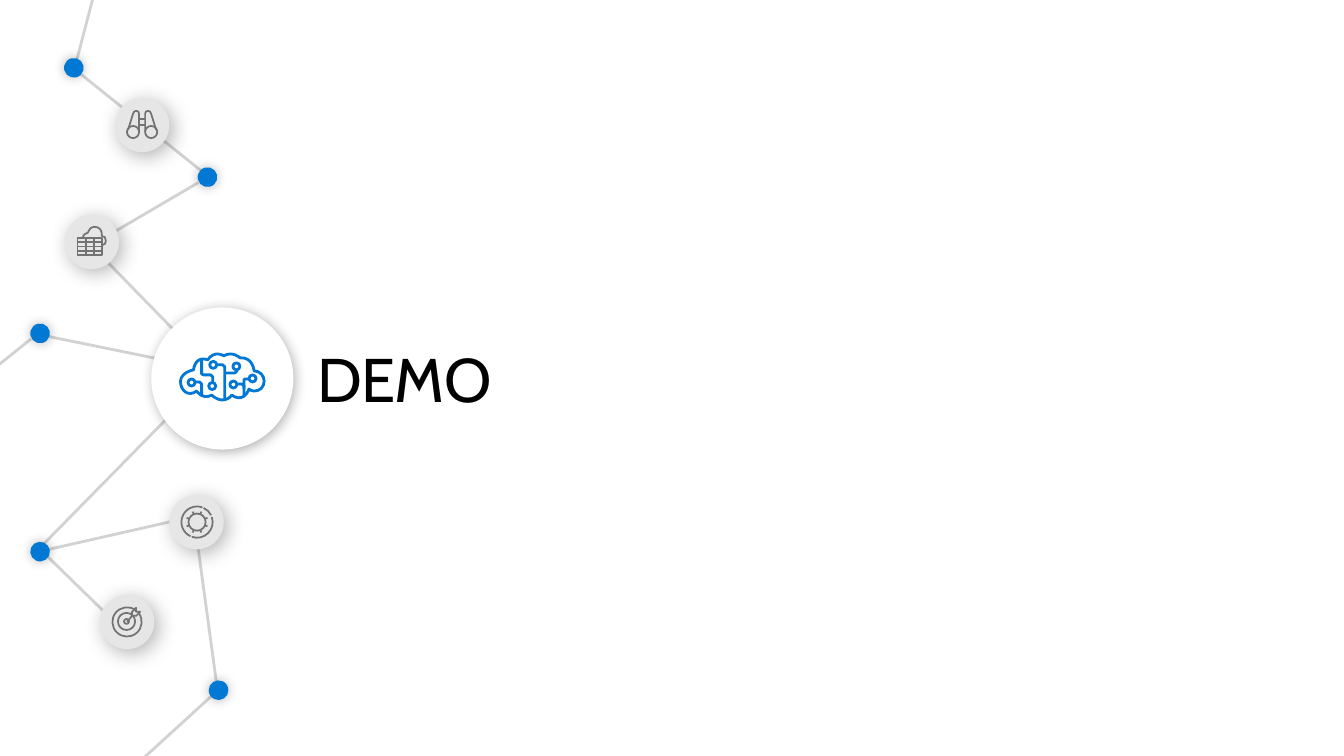
import math

import lxml.etree
import pptx
import pptx.dml.color
import pptx.enum.shapes
import pptx.enum.text
import pptx.oxml.ns
import pptx.util

COLUMNS, ROWS = 1333, 750
CELL = pptx.util.Inches(0.01)

GREY_LINE = {"color": "D2D2D2", "width": 2}
GREY_ICON = {"color": "737373", "width": 1.25}
BLUE_ICON = {"color": "0078D4", "width": 2}
DOT_SHADOW = {"alpha": 27, "blur": 8, "dist": 0, "angle": 0}
DISC_SHADOW = {"alpha": 30, "blur": 15, "dist": 4, "angle": 45}
HUB_SHADOW = {"alpha": 30, "blur": 9, "dist": 2, "angle": 45}


def rgb(hex_color):
    return pptx.dml.color.RGBColor.from_string(hex_color)


def add_xml(parent, tag, **attributes):
    return lxml.etree.SubElement(
        parent, pptx.oxml.ns.qn(tag), {k: str(v) for k, v in attributes.items()})


# Every stroke of an icon is a start point followed by three points for each cubic curve.

def straight(start, *ends):
    return [start, *(end for end in ends for _ in range(3))]


def arc(cx, cy, r, start=0, end=360):
    """Stroke along an arc, in degrees clockwise from the right."""
    count = math.ceil((end - start) / 90)
    step = math.radians((end - start) / count)
    k = 4 / 3 * math.tan(step / 4)
    points = [(cx + r * math.cos(math.radians(start)), cy + r * math.sin(math.radians(start)))]
    for i in range(count):
        a = math.radians(start) + i * step
        b = a + step
        points += [(cx + r * (math.cos(t) - h * math.sin(t)),
                    cy + r * (math.sin(t) + h * math.cos(t)))
                   for t, h in ((a, k), (b, -k), (b, 0))]
    return points


def bend_segments(sp):
    """Turn each three line segments of a freeform into one cubic curve."""
    segments = list(sp._element.spPr.iter(pptx.oxml.ns.qn("a:lnTo")))
    for i in range(0, len(segments), 3):
        curve = lxml.etree.Element(pptx.oxml.ns.qn("a:cubicBezTo"))
        segments[i].addprevious(curve)
        for segment in segments[i:i + 3]:
            curve.append(segment[0])
            segment.getparent().remove(segment)


class SlideBuilder:
    """Draws on one slide, with lengths in cells of its grid."""

    def __init__(self, prs, font):
        self.s = prs.slides.add_slide(prs.slide_layouts[6])
        self.font = font

    def cells(self, *counts):
        return [round(n * CELL) for n in counts]

    def stroke(self, sp, color, width):
        sp.line.color.rgb = rgb(color)
        sp.line.width = pptx.util.Pt(width)

    def line(self, start, end, style, parent=None, oval_head=False):
        cxn = (parent or self.s).shapes.add_connector(
            pptx.enum.shapes.MSO_CONNECTOR.STRAIGHT, *self.cells(*start, *end))
        self.stroke(cxn, **style)
        if oval_head:
            add_xml(cxn.line._get_or_add_ln(), "a:headEnd", type="oval")
        add_xml(cxn._element.spPr, "a:effectLst")
        return cxn

    def circle(self, left, top, size, fill, shadow, parent=None, rotation=0):
        sp = (parent or self.s).shapes.add_shape(
            pptx.enum.shapes.MSO_SHAPE.OVAL, *self.cells(left, top, size, size))
        sp.rotation = rotation
        sp.fill.solid()
        sp.fill.fore_color.rgb = rgb(fill)
        sp.line.fill.background()
        sp.shadow.inherit = False
        effects = sp._element.spPr.find(pptx.oxml.ns.qn("a:effectLst"))
        outer = add_xml(effects, "a:outerShdw", blurRad=pptx.util.Pt(shadow["blur"]),
                        dist=pptx.util.Pt(shadow["dist"]), dir=shadow["angle"] * 60000,
                        algn="ctr", rotWithShape=0)
        black = add_xml(outer, "a:srgbClr", val="000000")
        add_xml(black, "a:alpha", val=shadow["alpha"] * 1000)

    def badge(self, left, top, size, fill, shadow):
        """A group that starts with a disc."""
        group = self.s.shapes.add_group_shape()
        self.circle(left, top, size, fill, shadow, group)
        return group

    def icon(self, group, strokes, style):
        paths = [[self.cells(*point) for point in path] for path in strokes]
        builder = group.shapes.build_freeform(*paths[0][0])
        for i, path in enumerate(paths):
            if i:
                builder.move_to(*path[0])
            builder.add_line_segments(path[1:], close=path[0] == path[-1])
        sp = builder.convert_to_shape()
        bend_segments(sp)
        sp.fill.background()
        sp.shadow.inherit = False
        self.stroke(sp, **style)

    def table_icon(self, group, left, top, width, height, columns, rows, style):
        sp = group.shapes.add_shape(pptx.enum.shapes.MSO_SHAPE.RECTANGLE,
                                    *self.cells(left, top, width, height))
        sp.fill.background()
        sp.shadow.inherit = False
        self.stroke(sp, **style)
        for i in range(1, columns):
            x = left + width * i / columns
            self.line((x, top), (x, top + height), style, group)
        for i in range(1, rows):
            y = top + height * i / rows
            cxn = self.line((left, y), (left + width, y), style, group)
            if 2 * i == rows:
                cxn.begin_connect(sp, 1)
                cxn.end_connect(sp, 3)

    def text(self, left, top, width, height, words, size, color):
        tf = self.s.shapes.add_textbox(*self.cells(left, top, width, height)).text_frame
        inset = pptx.util.Inches(0.1)
        frame = {"word_wrap": True, "auto_size": pptx.enum.text.MSO_AUTO_SIZE.SHAPE_TO_FIT_TEXT,
                 "margin_left": inset, "margin_right": inset,
                 "margin_top": inset, "margin_bottom": inset}
        for name, value in frame.items():
            setattr(tf, name, value)
        r = tf.paragraphs[0].add_run()
        r.text = words
        for name, value in {"name": self.font, "size": pptx.util.Pt(size)}.items():
            setattr(r.font, name, value)
        r.font.color.rgb = rgb(color)
        r.font._element.set("spc", "-50")


LINKS = [((31, 336), (-10, 369)), ((211, 367), (49, 334)), ((218, 683), (125, 768)),
         ((193, 518), (217, 694)), ((91, 244), (211, 367)), ((44, 549), (128, 631)),
         ((44, 546), (185, 514)), ((211, 369), (44, 539)), ((197, 181), (93, 242)),
         ((77, 71), (204, 173)), ((75, 64), (93, -5))]
OVAL_HEAD_LINK, LINKS_UNDER_TEXT = 1, 9
DOTS = [(196, 166, 16.1), (207, 675, 356.7), (63.5, 57.5, 16.1),
        (30, 537.5, 24), (30, 321, 16.1)]

CLOUD = [[(82, 235), (83, 233), (85, 231), (87, 231), (88, 228), (90, 225), (94, 225),
          (98, 225), (101, 228), (101, 232), (101, 233), (101, 233), (101, 234),
          (104, 234), (105, 236), (105, 239), (105, 241), (104, 243), (102, 243)]]
TARGET = [arc(126, 617, 14.5, -36, 304), arc(125.5, 616.5, 8.5), arc(125.5, 616.5, 2.5),
          straight((126, 617), (131, 611)),
          straight((139, 607), (135, 607), (135, 603), (131, 607), (131, 611),
                   (135, 611), (139, 607))]
GEAR_TEETH = [straight(*(arc(195.5, 518, r, a, a + 1)[0] for r in (8.7, 11.2)))
              for a in (22.5 + 45 * i for i in range(8))]
GEAR = [arc(195.5, 518, 8.5), *GEAR_TEETH,
        *(arc(195.5, 518, 15.5, *span) for span in ((-245, -70), (-19, 110), (-65, -26)))]
BARREL = [*straight((155, 129), (150, 113)), (149, 111), (149, 110), (147, 110),
          (145, 110), (144, 111), *straight((144, 113), (144, 131))]
RIGHT_HALF = [arc(150, 131, 6), BARREL]
LEFT_HALF = [[(282 - x, y) for x, y in path] for path in RIGHT_HALF]
BINOCULARS = [*RIGHT_HALF, *LEFT_HALF,
              *(straight((138, y), (144, y)) for y in (118, 124))]

BRAIN_NODES = [(250.5, 375.5), (231.5, 381.5), (211.5, 362), (234.5, 363.5),
               (210.5, 383), (190, 379.5)]
BRAIN_TRACES = [
    [(200, 393), (200, 381), (198, 379), (193, 379)],
    [(223, 397), (223, 364), (221, 362), (215, 362)],
    [(223, 370), (233, 370), (235, 368), (235, 367)],
    [(200, 356), (200, 371), (202, 372), (209, 372), (211, 374), (211, 379)],
    [(247, 376), (243, 376), (242, 377), (242, 386)],
    [(242, 393), (242, 383), (240, 381), (235, 381)]]
BRAIN_OUTLINE = [
    (247, 386), (248, 387), (250, 388), (252, 388), (258, 388), (262, 384), (262, 378),
    (262, 373), (258, 368), (252, 368), (252, 368), (251, 354), (238, 355),
    (238, 355), (231, 348), (222, 353), (222, 353), (213, 347), (206, 357),
    (206, 357), (194, 352), (192, 367), (192, 367), (180, 369), (179, 378),
    (179, 388), (187, 394), (195, 388), (195, 388), (201, 397), (210, 392),
    (210, 392), (221, 403), (230, 392), (230, 392), (241, 401), (247, 386)]
BRAIN = [*(arc(x, y, 3.5) for x, y in BRAIN_NODES),
         *(straight(*trace) for trace in BRAIN_TRACES), BRAIN_OUTLINE]


def main():
    prs = pptx.Presentation()
    prs.slide_width, prs.slide_height = COLUMNS * CELL, ROWS * CELL
    slide = SlideBuilder(prs, "Cabin")
    for i, (start, end) in enumerate(LINKS):
        if i == LINKS_UNDER_TEXT:
            slide.text(305, 328, 556, 94, "DEMO", 44, "000000")
        slide.line(start, end, GREY_LINE, oval_head=i == OVAL_HEAD_LINK)
    for left, top, rotation in DOTS:
        slide.circle(left, top, 19.5, "0078D4", DOT_SHADOW, rotation=rotation)
    table_badge = slide.badge(64, 213, 54, "E6E6E6", DISC_SHADOW)
    slide.table_icon(table_badge, 77, 236, 24, 17, 3, 4, GREY_ICON)
    slide.icon(table_badge, CLOUD, GREY_ICON)
    for left, top, strokes in ((99, 590, TARGET), (168, 491, GEAR), (114, 97, BINOCULARS)):
        slide.icon(slide.badge(left, top, 54, "E6E6E6", DISC_SHADOW), strokes, GREY_ICON)
    slide.icon(slide.badge(150, 305, 141, "FFFFFF", HUB_SHADOW), BRAIN, BLUE_ICON)
    prs.save("out.pptx")


if __name__ == "__main__":
    main()
